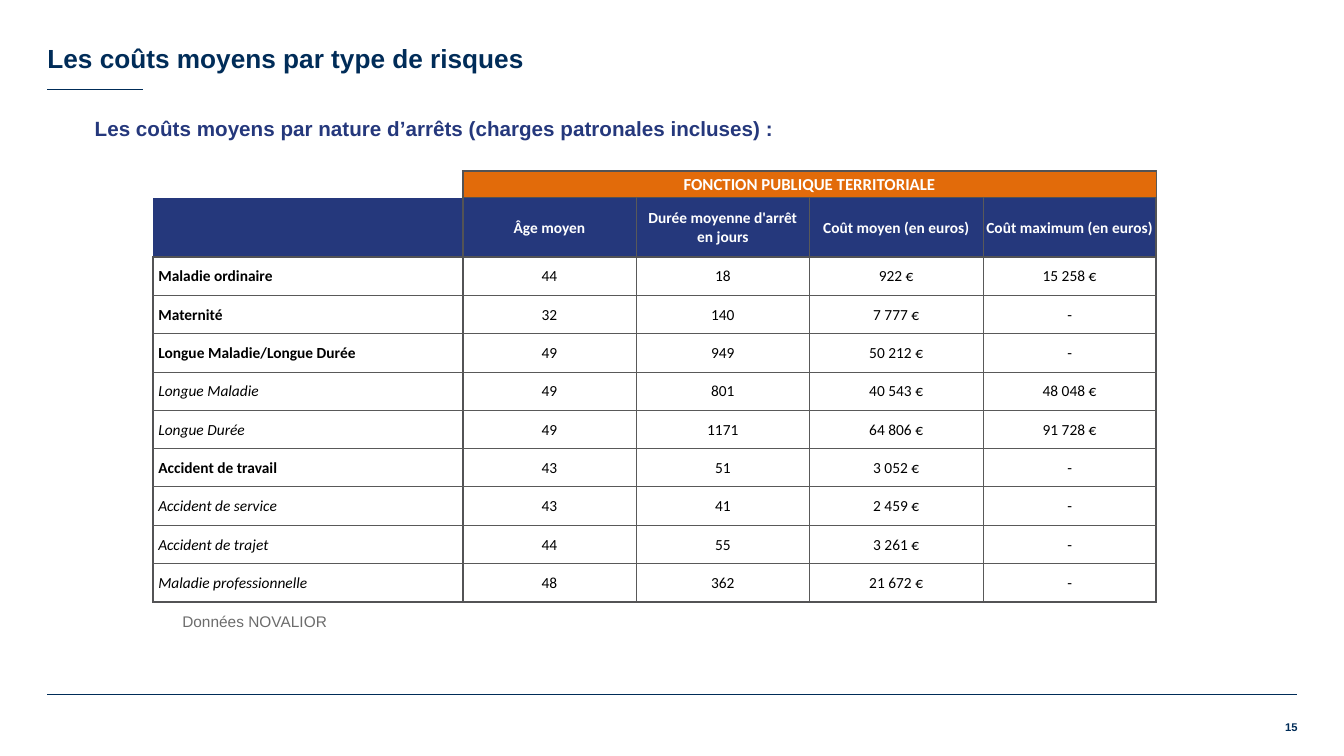
from lxml import etree
from pptx import Presentation
from pptx.dml.color import RGBColor
from pptx.enum.shapes import MSO_CONNECTOR
from pptx.enum.text import MSO_ANCHOR, PP_ALIGN
from pptx.oxml.ns import qn
from pptx.util import Inches, Pt

STRAIGHT = MSO_CONNECTOR.STRAIGHT
TOP, MIDDLE, BOTTOM = MSO_ANCHOR.TOP, MSO_ANCHOR.MIDDLE, MSO_ANCHOR.BOTTOM
LEFT, CENTER, RIGHT = PP_ALIGN.LEFT, PP_ALIGN.CENTER, PP_ALIGN.RIGHT
NAVY, BLUE, ORANGE = "002C58", "25387C", "E26B0A"
WHITE, BLACK, GREY = "FFFFFF", "000000", "6C6C6C"
THICK, THIN = ("535355", 1.5), ("595959", 0.5)


def rgb(hex_color):
    return RGBColor.from_string(hex_color)


def write(frame, text, font, size, color, bold=False, italic=False, align=LEFT):
    """Fill a text frame, one paragraph per line of text."""
    frame.word_wrap = True
    for i, line in enumerate(text.split("\n")):
        paragraph = frame.paragraphs[0] if i == 0 else frame.add_paragraph()
        paragraph.text = line
        paragraph.alignment = align
        paragraph.font.name = font
        paragraph.font.size = Pt(size)
        paragraph.font.bold = bold
        paragraph.font.italic = italic
        paragraph.font.color.rgb = rgb(color)


prs = Presentation()
prs.slide_width, prs.slide_height = Inches(13.33), Inches(7.5)
slide = prs.slides.add_slide(prs.slide_layouts[6])

# Footer rule and title rule
for right, y in ((12.86, 6.89), (1.42, 0.89)):
    rule = slide.shapes.add_connector(
        STRAIGHT, Inches(0.47), Inches(y), Inches(right), Inches(y))
    rule.line.color.rgb = rgb(NAVY)
    rule.line.width = Pt(0.5)
    etree.SubElement(rule._element.spPr, qn("a:effectLst"))

# Cost table
headers = ["", "Âge moyen", "Durée moyenne d'arrêt\nen jours",
           "Coût moyen (en euros)", "Coût maximum (en euros)"]
costs = [
    ("Maladie ordinaire", "44", "18", "922 €", "15 258 €"),
    ("Maternité", "32", "140", "7 777 €", "-"),
    ("Longue Maladie/Longue Durée", "49", "949", "50 212 €", "-"),
    ("Longue Maladie", "49", "801", "40 543 €", "48 048 €"),
    ("Longue Durée", "49", "1171", "64 806 €", "91 728 €"),
    ("Accident de travail", "43", "51", "3 052 €", "-"),
    ("Accident de service", "43", "41", "2 459 €", "-"),
    ("Accident de trajet", "44", "55", "3 261 €", "-"),
    ("Maladie professionnelle", "48", "362", "21 672 €", "-"),
]
main_risks = {"Maladie ordinaire", "Maternité", "Longue Maladie/Longue Durée",
              "Accident de travail"}
rows = [["", "FONCTION PUBLIQUE TERRITORIALE", "", "", ""], headers, *costs]
column_widths = [3.07] + [1.72] * 4
row_heights = [0.26, 0.59] + [0.38] * len(costs)

table = slide.shapes.add_table(
    len(rows), len(headers), Inches(1.52), Inches(1.7),
    Inches(sum(column_widths)), Inches(sum(row_heights))).table
table.first_row = table.horz_banding = False
for column, width in zip(table.columns, column_widths):
    column.width = Inches(width)
for row, height in zip(table.rows, row_heights):
    row.height = Inches(height)
table.cell(0, 1).merge(table.cell(0, 4))

thick_columns = {0, 1, len(headers)}
thick_rows = {0, 1, 2, len(rows)}
for r, values in enumerate(rows):
    for c, value in enumerate(values):
        cell = table.cell(r, c)
        cell.vertical_anchor = MIDDLE
        cell.margin_left = Inches(0.05 if c == 0 else 0.01)
        cell.margin_right = cell.margin_top = Inches(0.01)
        cell.margin_bottom = 0
        is_header = r < 2
        is_label = c == 0
        if not cell.is_spanned:
            write(cell.text_frame, value, "Calibri", 12 if r == 0 else 11,
                  WHITE if is_header else BLACK,
                  bold=is_header or value in main_risks,
                  italic=is_label and not is_header and value not in main_risks,
                  align=LEFT if is_label else CENTER)

        if r == 0 and is_label:
            cell.fill.background()
        else:
            cell.fill.solid()
            cell.fill.fore_color.rgb = rgb(
                ORANGE if r == 0 else BLUE if r == 1 else WHITE)

        edges = {
            "L": THICK if c in thick_columns else THIN,
            "R": THICK if c + 1 in thick_columns else THIN,
            "T": THICK if r in thick_rows else THIN,
            "B": THICK if r + 1 in thick_rows else THIN,
        }
        if is_header and is_label:
            edges["L"] = edges["T"] = None
            if r == 0:
                edges["B"] = None
        properties = cell._tc.get_or_add_tcPr()
        for position, (side, style) in enumerate(edges.items()):
            border = etree.Element(qn(f"a:ln{side}"))
            properties.insert(position, border)
            if style is None:
                etree.SubElement(border, qn("a:noFill"))
                continue
            color, width = style
            border.set("w", str(Pt(width)))
            fill = etree.SubElement(border, qn("a:solidFill"))
            etree.SubElement(fill, qn("a:srgbClr"), val=color)

# Source, subtitle, title and page number:
# place, side and vertical margins, anchor, text, size, colour, bold, alignment
captions = [
    ((1.71, 6.02, 4.44, 0.29), (0.1, 0.05), TOP,
     "Données NOVALIOR", 11, GREY, False, LEFT),
    ((0.68, 1.06, 10.5, 0.42), (0.26, 0), MIDDLE,
     "Les coûts moyens par nature d’arrêts (charges patronales incluses) :",
     14.7, BLUE, True, LEFT),
    ((0.47, 0, 12.39, 0.73), (0, 0), BOTTOM,
     "Les coûts moyens par type de risques", 18.7, NAVY, True, LEFT),
    ((12.48, 7.15, 0.39, 0.2), (0, 0), TOP, "15", 8, NAVY, True, RIGHT),
]
for place, (side, vertical), anchor, text, size, color, bold, align in captions:
    frame = slide.shapes.add_textbox(*map(Inches, place)).text_frame
    frame.margin_left = frame.margin_right = Inches(side)
    frame.margin_top = frame.margin_bottom = Inches(vertical)
    frame.vertical_anchor = anchor
    write(frame, text, "Arial", size, color, bold=bold, align=align)

prs.save("out.pptx")
